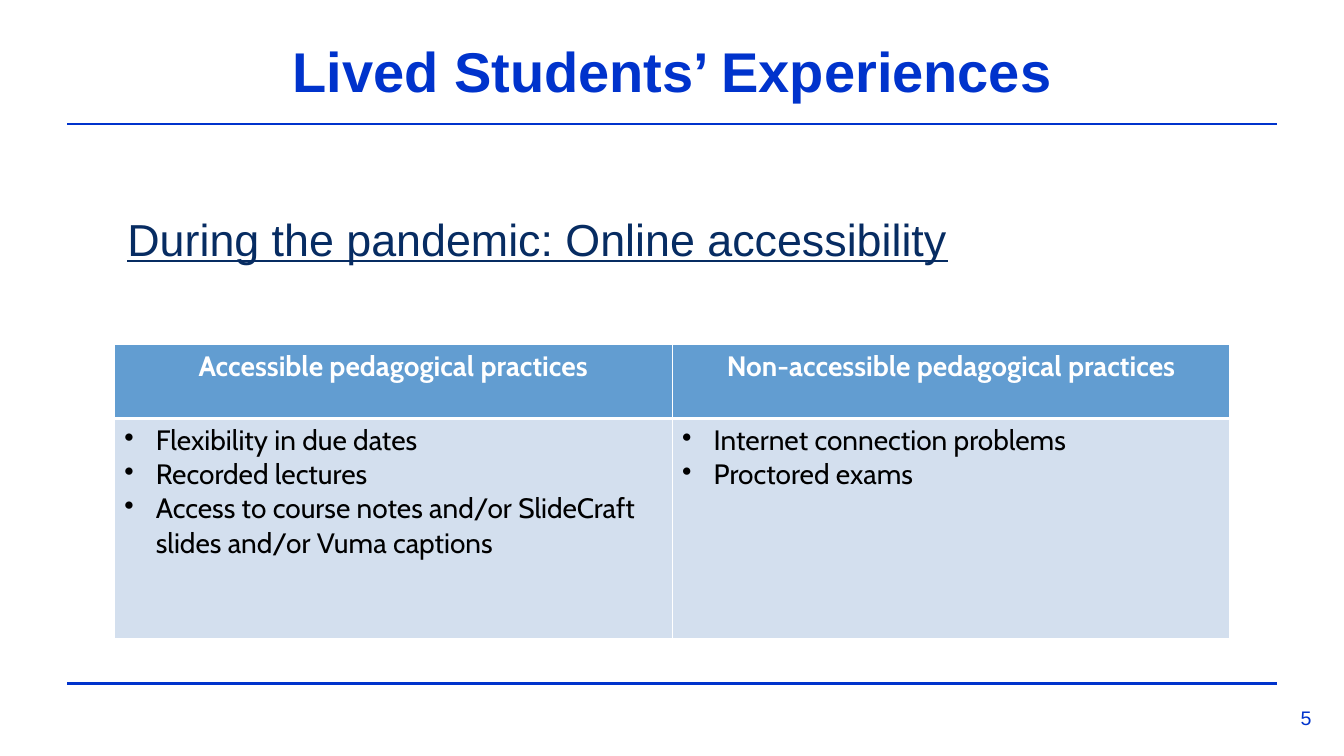
import pptx
import pptx.util
import pptx.dml.color
import pptx.enum.shapes
import pptx.enum.text
import pptx.oxml
import pptx.oxml.ns
from dataclasses import dataclass

Pt = pptx.util.Pt
RGB = pptx.dml.color.RGBColor.from_string
ALIGN = pptx.enum.text.PP_ALIGN
ANCHOR = pptx.enum.text.MSO_ANCHOR
qn = pptx.oxml.ns.qn
NS = pptx.oxml.ns.nsdecls("a")


@dataclass(frozen=True)
class Theme:
    blue: str = "0033CC"
    navy: str = "072C62"
    header_fill: str = "629DD1"
    body_fill: str = "D3DFEE"
    white: str = "FFFFFF"
    black: str = "000000"
    title_size: int = 40
    subtitle_size: int = 32
    table_size: int = 20
    number_size: int = 14
    font: str = "Arial"
    table_font: str = "Cabin"


THEME = Theme()
MARGIN, CONTENT_WIDTH = 48, 864
PRACTICES = {
    "Accessible pedagogical practices": [
        "Flexibility in due dates",
        "Recorded lectures",
        "Access to course notes and/or SlideCraft slides and/or Vuma captions",
    ],
    "Non-accessible pedagogical practices": [
        "Internet connection problems",
        "Proctored exams",
    ],
}


def set_all(obj, values):
    for name, value in values.items():
        setattr(obj, name, value)


def place(sp, left, top, width, height):
    set_all(sp, {"left": Pt(left), "top": Pt(top),
                 "width": Pt(width), "height": Pt(height)})


def write(p, text, color, size, font=THEME.font, align=ALIGN.LEFT, **style):
    set_all(p, {"alignment": align, "space_before": Pt(0)})
    r = p.add_run()
    r.text = text
    set_all(r.font, {"name": font, "size": Pt(size), **style})
    r.font.color.rgb = RGB(color)


def set_bullet(p, char=None, indent=0):
    """Give the paragraph a hanging bullet, or none without a character."""
    pPr = p._p.get_or_add_pPr()
    pPr.set("marL", str(Pt(indent)))
    pPr.set("indent", str(-Pt(indent)))
    bullet = f'<a:buChar {NS} char="{char}"/>' if char else f"<a:buNone {NS}/>"
    pPr.append(pptx.oxml.parse_xml(bullet))


def add_rule(s, y):
    line = s.shapes.add_connector(
        pptx.enum.shapes.MSO_CONNECTOR.STRAIGHT,
        Pt(MARGIN), Pt(y), Pt(MARGIN + CONTENT_WIDTH), Pt(y))
    line.line.color.rgb = RGB(THEME.blue)
    line.line.width = Pt(1.5)
    line._element.spPr.append(pptx.oxml.parse_xml(f"<a:effectLst {NS}/>"))


def set_title(s, text):
    sp = s.shapes.title
    place(sp, MARGIN, 24, CONTENT_WIDTH, 54)
    tf = sp.text_frame
    set_all(tf, {"vertical_anchor": ANCHOR.BOTTOM, "word_wrap": True,
                 "auto_size": pptx.enum.text.MSO_AUTO_SIZE.NONE})
    write(tf.paragraphs[0], text, THEME.blue, THEME.title_size,
          align=ALIGN.CENTER, bold=True)


def set_body(s, text):
    sp = s.placeholders[1]
    place(sp, MARGIN, 100, CONTENT_WIDTH, 385)
    tf = sp.text_frame
    set_all(tf, {"vertical_anchor": ANCHOR.TOP, "word_wrap": True,
                 "auto_size": pptx.enum.text.MSO_AUTO_SIZE.NONE,
                 "margin_left": Pt(43), "margin_top": Pt(51)})
    p = tf.paragraphs[0]
    write(p, text, THEME.navy, THEME.subtitle_size, underline=True)
    set_bullet(p)


def add_page_number(s, number):
    sp = s.shapes.add_textbox(Pt(906), Pt(500.4), Pt(54), Pt(30))
    sp.text_frame.word_wrap = True
    write(sp.text_frame.paragraphs[0], number, THEME.blue, THEME.number_size,
          align=ALIGN.CENTER)


def format_cell(cell, fill, top, bottom):
    """Fill the cell and give it white borders; top and bottom are widths."""
    cell.fill.solid()
    cell.fill.fore_color.rgb = RGB(fill)
    tcPr = cell._tc.get_or_add_tcPr()
    borders = {"lnL": 1, "lnR": 1, "lnT": top, "lnB": bottom}
    for i, (tag, width) in enumerate(borders.items()):
        tcPr.insert(i, pptx.oxml.parse_xml(
            f'<a:{tag} {NS} w="{Pt(width)}"><a:solidFill>'
            f'<a:srgbClr val="{THEME.white}"/></a:solidFill></a:{tag}>'))


def add_practices_table(s, practices):
    frame = s.shapes.add_table(2, len(practices), Pt(81.6), Pt(245.8),
                               Pt(797), Pt(210.2))
    table = frame.table
    for row, height in zip(table.rows, (53.2, 157)):
        row.height = Pt(height)
    for col, (heading, items) in enumerate(practices.items()):
        table.columns[col].width = Pt(398.5)
        header, body = table.cell(0, col), table.cell(1, col)
        format_cell(header, THEME.header_fill, 1, 3)
        format_cell(body, THEME.body_fill, 3, 1)
        write(header.text_frame.paragraphs[0], heading, THEME.white,
              THEME.table_size, THEME.table_font, ALIGN.CENTER, bold=True)
        tf = body.text_frame
        for i, item in enumerate(items):
            p = tf.add_paragraph() if i else tf.paragraphs[0]
            write(p, item, THEME.black, THEME.table_size, THEME.table_font,
                  bold=False)
            set_bullet(p, "•", 22.5)


def main():
    prs = pptx.Presentation()
    set_all(prs, {"slide_width": Pt(960), "slide_height": Pt(540)})
    s = prs.slides.add_slide(prs.slide_layouts[1])
    for y in (488.2, 88.6):
        add_rule(s, y)
    set_title(s, "Lived Students’ Experiences")
    set_body(s, "During the pandemic: Online accessibility")
    add_page_number(s, "5")
    add_practices_table(s, PRACTICES)
    prs.save("out.pptx")


if __name__ == "__main__":
    main()
